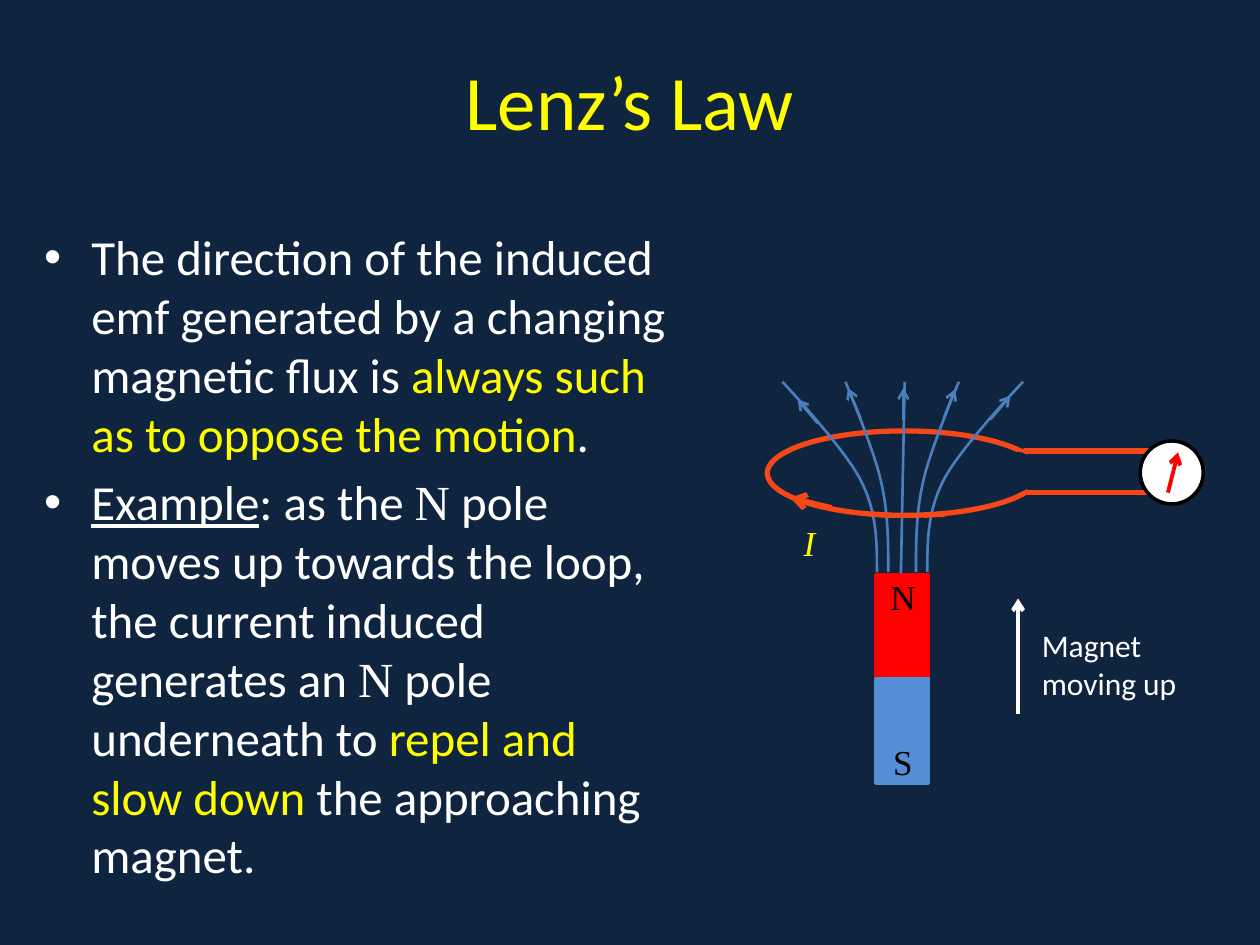
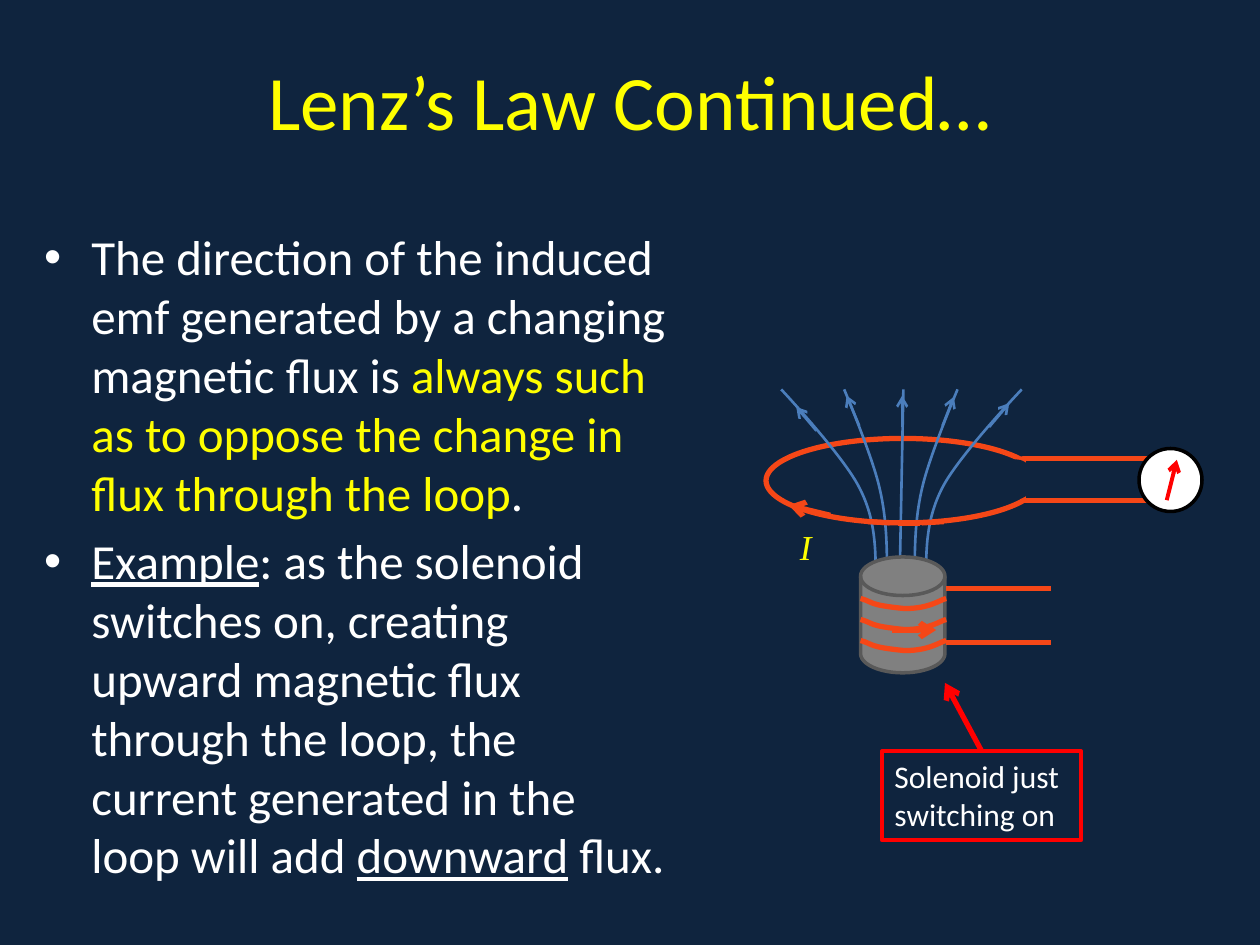
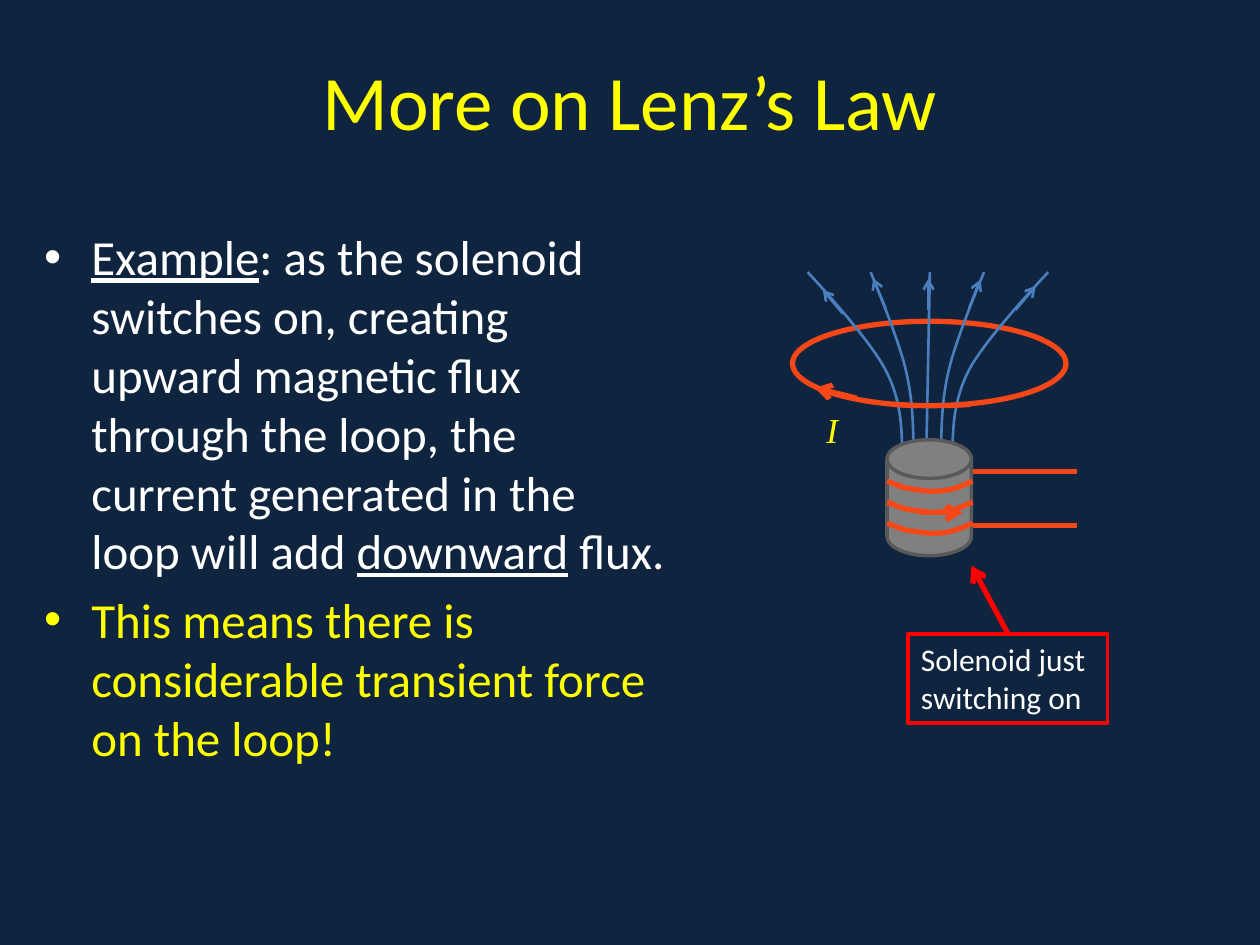
"""Build three slides on Lenz's law, each with a diagram of a current loop."""
from pptx import Presentation, util as u
from pptx.dml.color import RGBColor
from pptx.enum import shapes, text
from pptx.oxml.ns import qn
from lxml import etree

NAVY = RGBColor(0x0F, 0x24, 0x3E)
YELLOW = RGBColor(0xFF, 0xFF, 0x00)
WHITE = RGBColor(0xFF, 0xFF, 0xFF)
BLACK = RGBColor(0x00, 0x00, 0x00)
RED = RGBColor(0xFF, 0x00, 0x00)
ORANGE = RGBColor(0xF5, 0x47, 0x17)
FIELD = RGBColor(0x4B, 0x7E, 0xBC)
SOUTH = RGBColor(0x55, 0x8E, 0xD5)
GREY = RGBColor(0x80, 0x80, 0x80)
DARK_GREY = RGBColor(0x59, 0x59, 0x59)
SANS, SERIF = "Calibri", "Times New Roman"
RECT, OVAL = shapes.MSO_SHAPE.RECTANGLE, shapes.MSO_SHAPE.OVAL
DISK = shapes.MSO_SHAPE.FLOWCHART_MAGNETIC_DISK

prs = Presentation()
prs.slide_width, prs.slide_height = u.Inches(10), u.Inches(7.5)
COL = prs.slide_width / 10


def line(g, origin, start, end, color, width, arrow=False):
    ends = [int((o + d) * COL) for p in (start, end) for o, d in zip(origin, p)]
    cxn = g.shapes.add_connector(shapes.MSO_CONNECTOR.STRAIGHT, *ends)
    cxn.line.color.rgb = color
    cxn.line.width = u.Pt(width)
    etree.SubElement(cxn._element.spPr, qn("a:effectLst"))
    if arrow:
        etree.SubElement(cxn.line._get_or_add_ln(), qn("a:tailEnd"), type="arrow")
    return cxn


def curve(g, origin, points, color, width):
    pts = [[int((o + d) * COL) for o, d in zip(origin, p)] for p in points]
    builder = g.shapes.build_freeform(*pts[0])
    builder.add_line_segments(pts[1:], close=False)
    sp = builder.convert_to_shape()
    segments = list(sp._element.iter(qn("a:lnTo")))
    for i in range(0, len(segments), 3):
        bezier = etree.Element(qn("a:cubicBezTo"))
        segments[i].addprevious(bezier)
        for segment in segments[i:i + 3]:
            bezier.append(segment[0])
            segment.getparent().remove(segment)
    sp.shadow.inherit = False
    sp.fill.background()
    sp.line.color.rgb = color
    sp.line.width = u.Pt(width)


STYLES = {
    "plain": (SANS, WHITE, False),
    "key": (SANS, YELLOW, False),
    "under": (SANS, WHITE, True),
    "pole": (SERIF, WHITE, False),
}
DIRECTION = "The direction of the induced emf generated by a changing magnetic flux is "
SOLENOID_EXAMPLE = [
    ("Example", "under"),
    (": as the solenoid switches on, creating upward magnetic flux through the loop, "
     "the current generated in the loop will add ", "plain"),
    ("downward", "under"),
    (" flux.", "plain"),
]
SLIDES = [
    ("Lenz’s Law", (6.09, 3.42), True, True, [
        [(DIRECTION, "plain"), ("always such as to oppose the motion", "key"),
         (".", "plain")],
        [("Example", "under"), (": as the ", "plain"), ("N", "pole"),
         (" pole moves up towards the loop, the current induced generates an ", "plain"),
         ("N", "pole"), (" pole underneath to ", "plain"),
         ("repel and slow down", "key"), (" the approaching magnet.", "plain")],
    ]),
    ("Lenz’s Law Continued…", (6.08, 3.48), False, True, [
        [(DIRECTION, "plain"),
         ("always such as to oppose the change in flux through the loop", "key"),
         (".", "plain")],
        SOLENOID_EXAMPLE,
    ]),
    ("More on Lenz’s Law", (6.29, 2.55), False, False, [
        SOLENOID_EXAMPLE,
        [("This means there is considerable transient force on the loop!", "key")],
    ]),
]

MAGNET = [(RECT, (0.86, 1.14, 0.42, 0.83), RED, RED, 2),
          (RECT, (0.86, 1.97, 0.42, 0.83), SOUTH, SOUTH, 2)]
LOOP = [(OVAL, (0, 0, 2.17, 0.67), None, ORANGE, 3)]
METER = [(RECT, (2.04, 0.16, 1, 0.33), NAVY, ORANGE, 3),
         (OVAL, (1.86, 0.18, 0.25, 0.29), NAVY, NAVY, 2),
         (OVAL, (2.96, 0.08, 0.5, 0.5), WHITE, BLACK, 2)]
CORE = [(DISK, (0.75, 0.94, 0.67, 0.92), GREY, DARK_GREY, 2)]
FIELD_CURVES = [(1.18, 1.24, 1.52), (0.96, 0.9, 0.62), (0.87, 0.74, 0.12), (1.27, 1.4, 2.03)]
FIELD_ARROWS = [((1.08, -0.09), (1.08, -0.34)), ((1.4, -0.1), (1.49, -0.33)),
                ((1.77, -0.09), (1.93, -0.28)), ((0.4, -0.06), (0.24, -0.25)),
                ((0.74, -0.1), (0.64, -0.34))]
LOOP_FRONT = [((1.05, 0.67), (1.22, 0.67)), ((1.24, 0.67), (1.41, 0.66)),
              ((0.81, 0.66), (0.98, 0.67))]
MAGNET_LABELS = [("I", (0.19, 0.67, 0.5, 0.44), SERIF, 20, YELLOW),
                 ("N", (0.88, 1.1, 0.33, 0.44), SERIF, 20, BLACK),
                 ("S", (0.9, 2.41, 0.33, 0.44), SERIF, 20, BLACK),
                 ("Magnet moving up", (2.08, 1.5, 1.5, 0.71), SANS, 18, WHITE)]
CALLOUT = ("Solenoid just switching on", (0.92, 2.48, 1.58, 0.71), SANS, 18, WHITE)
SOLENOID_LABELS = [("I", (0.17, 0.64, 0.5, 0.44), SERIF, 20, YELLOW), CALLOUT]

fill = prs.slide_master.background.fill
fill.solid()
fill.fore_color.rgb = NAVY
layout = prs.slide_layouts[1]
for ph, frame in zip(layout.placeholders, ((0.5, 0.17, 9, 1.25), (0.25, 1.75, 5.17, 5.58))):
    ph.left, ph.top, ph.width, ph.height = (int(v * COL) for v in frame)

for title, origin, has_magnet, has_meter, paragraphs in SLIDES:
    s = prs.slides.add_slide(layout)
    r = s.shapes.title.text_frame.paragraphs[0].add_run()
    r.text = title
    r.font.name, r.font.size, r.font.color.rgb = SANS, u.Pt(44), YELLOW

    tf = s.placeholders[1].text_frame
    tf.auto_size = text.MSO_AUTO_SIZE.NONE
    for i, runs in enumerate(paragraphs):
        p = tf.add_paragraph() if i else tf.paragraphs[0]
        for words, style in runs:
            r = p.add_run()
            r.text = words
            r.font.size = u.Pt(28)
            r.font.name, r.font.color.rgb, r.font.underline = STYLES[style]

    g = s.shapes.add_group_shape()
    outlines = (MAGNET if has_magnet else []) + LOOP + (METER if has_meter else [])
    for layer in (outlines, [] if has_magnet else CORE):
        for kind, (dx, dy, w, h), fill_color, line_color, width in layer:
            sp = g.shapes.add_shape(kind, *(int(v * COL) for v in
                                            (origin[0] + dx, origin[1] + dy, w, h)))
            sp.shadow.inherit = False
            if fill_color is None:
                sp.fill.background()
            else:
                sp.fill.solid()
                sp.fill.fore_color.rgb = fill_color
            sp.line.color.rgb = line_color
            sp.line.width = u.Pt(width)
        if layer is outlines:
            line(g, origin, (1.06, 1.13), (1.09, -0.39), FIELD, 1.5)
            for foot, waist, tip in FIELD_CURVES:
                bend = waist + (tip - waist) / 5
                curve(g, origin, [(foot, 1.12), (foot, 0.88), (foot, 0.64), (waist, 0.39),
                                  (bend, 0.14), (tip, -0.39), (tip, -0.39)], FIELD, 1.5)
            for start, end in LOOP_FRONT:
                line(g, origin, start, end, ORANGE, 3)
            for start, end in FIELD_ARROWS:
                line(g, origin, start, end, FIELD, 1.5, arrow=True)
            line(g, origin, (0.51, 0.61), (0.18, 0.53), ORANGE, 3, arrow=True)

    if has_meter:
        line(g, origin, (3.18, 0.49), (3.26, 0.17), RED, 2.25, arrow=True)
    if has_magnet:
        line(g, origin, (1.99, 2.25), (1.99, 1.33), WHITE, 2.25, arrow=True)
    else:
        for turn in range(3):
            left, top = 0.75, 1.27 + turn / 6
            curve(g, origin, [(left + dx, top + dy) for dx, dy in (
                (0, 0), (0.11, 0.03), (0.05, 0.05), (0.35, 0.08),
                (0.55, 0.08), (0.63, 0.01), (0.68, 0))], ORANGE, 3)
        for wire in (1.19, 1.62):
            line(g, origin, (1.43, wire), (2.26, wire), ORANGE, 3)
        line(g, origin, (1, 1.52), (1.35, 1.52), ORANGE, 3, arrow=True)

    for label in MAGNET_LABELS if has_magnet else SOLENOID_LABELS:
        words, (dx, dy, w, h), font, size, color = label
        box = g.shapes.add_textbox(*(int(v * COL) for v in
                                     (origin[0] + dx, origin[1] + dy, w, h)))
        box.text_frame.word_wrap = True
        r = box.text_frame.paragraphs[0].add_run()
        r.text = words
        r.font.name, r.font.size, r.font.color.rgb = font, u.Pt(size), color
        r.font.italic = words == "I"
        if label is CALLOUT:
            box.line.color.rgb = RED
            box.line.width = u.Pt(2.25)
            pointer = line(g, origin, (1.71, 2.48), (1.42, 1.94), RED, 3, arrow=True)
            pointer.begin_connect(box, 0)

prs.save("out.pptx")
